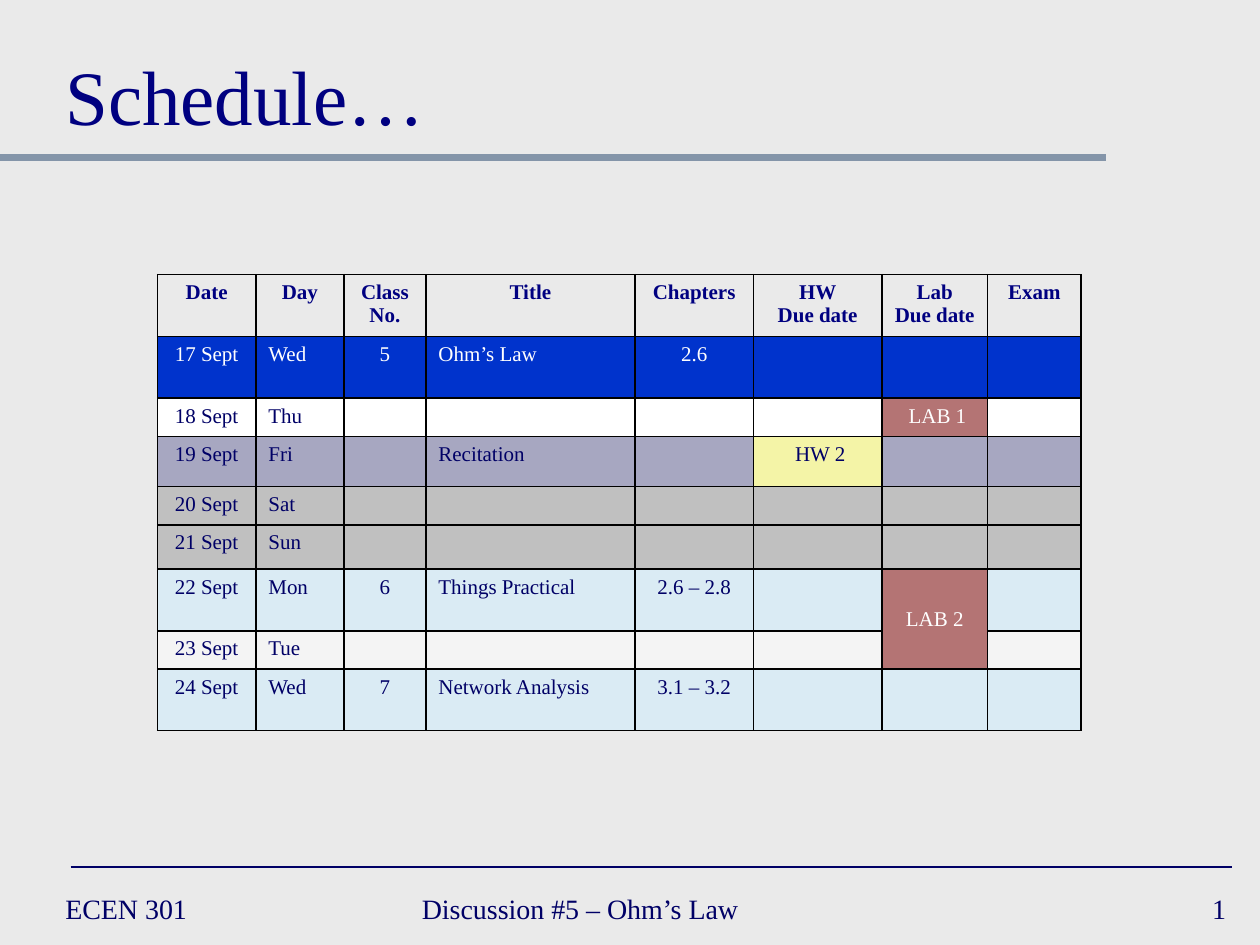
from dataclasses import dataclass, field
from typing import Optional

from lxml import etree
from pptx import Presentation
from pptx.dml.color import RGBColor
from pptx.enum import shapes, text
from pptx.oxml import ns
from pptx.util import Inches, Pt


@dataclass(frozen=True)
class Theme:
    font: str = "Times New Roman"
    background: str = "EAEAEA"
    title: str = "000080"
    body: str = "000066"
    light: str = "FFFFFF"
    border: str = "000000"
    title_rule: str = "8495A9"
    title_size: int = 44
    footer_size: int = 16
    table_size: int = 12


@dataclass(frozen=True)
class Fill:
    color: str
    alpha: int = 100


@dataclass(frozen=True)
class Day:
    """One table row; texts and fills are keyed by column heading."""
    height: float
    fill: Optional[Fill]
    texts: dict
    color: str
    bold: bool = False
    marks: dict = field(default_factory=dict)


@dataclass(frozen=True)
class Label:
    text: str
    box: tuple
    size: int
    color: str
    align: text.PP_ALIGN = text.PP_ALIGN.LEFT
    anchor: text.MSO_ANCHOR = text.MSO_ANCHOR.MIDDLE
    wrap: bool = False


@dataclass(frozen=True)
class Rule:
    start: tuple
    end: tuple
    color: str
    width: float


T = Theme()
LEFT, CENTER, RIGHT = text.PP_ALIGN.LEFT, text.PP_ALIGN.CENTER, text.PP_ALIGN.RIGHT

TODAY = Fill("0033CC")
OPEN = Fill("FFFFFF")
RECITATION = Fill("666699", 50)
WEEKEND = Fill("C0C0C0")
CLASS = Fill("CCECFF", 50)
FREE = Fill("FFFFFF", 50)
LAB = Fill("800000", 50)
HOMEWORK = Fill("FFFF66", 50)

COLUMNS = {"Date": 0.78, "Day": 0.7, "Class\nNo.": 0.65, "Title": 1.66, "Chapters": 0.94,
           "HW\nDue date": 1.02, "Lab\nDue date": 0.84, "Exam": 0.74}
HEADINGS = list(COLUMNS)
LEFT_COLUMNS = ("Day", "Title")
LAB_COLUMN = HEADINGS.index("Lab\nDue date")


def day(height: float, fill: Fill, *texts: str, color: str = T.body, **marks) -> Day:
    """Row with texts from the first column on; marks are hw or lab (text, fill)."""
    names = {"hw": "HW\nDue date", "lab": "Lab\nDue date"}
    return Day(height, fill, dict(zip(HEADINGS, texts)), color,
               marks={names[k]: v for k, v in marks.items()})


ROWS = [
    Day(0.49, None, {h: h for h in HEADINGS}, T.title, bold=True),
    day(0.49, TODAY, "17 Sept", "Wed", "5", "Ohm’s Law", "2.6", color=T.light),
    day(0.3, OPEN, "18 Sept", "Thu", lab=(" LAB 1", LAB)),
    day(0.4, RECITATION, "19 Sept", "Fri", "", "Recitation", hw=(" HW 2", HOMEWORK)),
    day(0.3, WEEKEND, "20 Sept", "Sat"),
    day(0.35, WEEKEND, "21 Sept", "Sun"),
    day(0.49, CLASS, "22 Sept", "Mon", "6", "Things Practical", "2.6 – 2.8", lab=("LAB 2", LAB)),
    day(0.29, FREE, "23 Sept", "Tue"),
    day(0.49, CLASS, "24 Sept", "Wed", "7", "Network Analysis", "3.1 – 3.2"),
]
LAB_2_ROW = 6

RULES = [
    Rule((0, 1.25), (8.78, 1.25), T.title_rule, 4),
    Rule((0.56, 6.88), (9.78, 6.88), T.body, 1),
]
LABELS = [
    Label("ECEN 301", (0.42, 7, 2.17, 0.42), T.footer_size, T.body),
    Label("Discussion #5 – Ohm’s Law", (3.25, 7, 3.83, 0.42), T.footer_size, T.body),
    Label("1", (7.75, 7, 2.08, 0.42), T.footer_size, T.body, RIGHT),
    Label("Schedule…", (0.42, 0.17, 9.25, 1), T.title_size, T.title,
          anchor=text.MSO_ANCHOR.BOTTOM, wrap=True),
]


def write(tf, content: str, *, size: int, color: str, align=LEFT, bold: bool = False) -> None:
    for i, line in enumerate(content.split("\n")):
        p = tf.paragraphs[0] if i == 0 else tf.add_paragraph()
        p.alignment = align
        if not line:
            etree.SubElement(p._p, ns.qn("a:endParaRPr"), sz=str(size * 100))
            continue
        r = p.add_run()
        r.text = line
        r.font.name, r.font.size, r.font.bold = T.font, Pt(size), bold
        r.font.color.rgb = RGBColor.from_string(color)


def add_rule(slide, rule: Rule) -> None:
    sp = slide.shapes.add_connector(shapes.MSO_CONNECTOR.STRAIGHT,
                                    *map(Inches, rule.start + rule.end))
    sp.line.color.rgb = RGBColor.from_string(rule.color)
    sp.line.width = Pt(rule.width)
    etree.SubElement(sp._element.spPr, ns.qn("a:effectLst"))


def add_label(slide, label: Label) -> None:
    tf = slide.shapes.add_textbox(*map(Inches, label.box)).text_frame
    tf.word_wrap = label.wrap
    tf.vertical_anchor = label.anchor
    write(tf, label.text, size=label.size, color=label.color, align=label.align)


def add_borders(cell) -> None:
    tc_pr = cell._tc.get_or_add_tcPr()
    for side in "LRTB":
        ln = etree.SubElement(tc_pr, ns.qn(f"a:ln{side}"), w=str(Pt(1)))
        solid = etree.SubElement(ln, ns.qn("a:solidFill"))
        etree.SubElement(solid, ns.qn("a:srgbClr"), val=T.border)


def fill_cell(cell, fill: Optional[Fill]) -> None:
    if fill is None:
        cell.fill.background()
        return
    cell.fill.solid()
    cell.fill.fore_color.rgb = RGBColor.from_string(fill.color)
    if fill.alpha < 100:
        color = cell._tc.tcPr.find(f"{ns.qn('a:solidFill')}/{ns.qn('a:srgbClr')}")
        etree.SubElement(color, ns.qn("a:alpha"), val=str(fill.alpha * 1000))


def add_schedule(slide) -> None:
    height = sum(row.height for row in ROWS)
    table = slide.shapes.add_table(len(ROWS), len(COLUMNS), Inches(1.25), Inches(2.18),
                                   Inches(sum(COLUMNS.values())), Inches(height)).table
    table.first_row = table.horz_banding = False
    for column, width in zip(table.columns, COLUMNS.values()):
        column.width = Inches(width)
    for i, row in enumerate(ROWS):
        table.rows[i].height = Inches(row.height)
        for j, heading in enumerate(HEADINGS):
            cell = table.cell(i, j)
            content, fill = row.marks.get(heading, (row.texts.get(heading, ""), row.fill))
            color = T.light if fill == LAB else row.color
            align = LEFT if heading in LEFT_COLUMNS and not row.bold else CENTER
            add_borders(cell)
            fill_cell(cell, fill)
            write(cell.text_frame, content, size=T.table_size, color=color,
                  align=align, bold=row.bold)
    lab_2 = table.cell(LAB_2_ROW, LAB_COLUMN)
    lab_2.merge(table.cell(LAB_2_ROW + 1, LAB_COLUMN))
    lab_2.vertical_anchor = text.MSO_ANCHOR.MIDDLE


def main() -> None:
    prs = Presentation()
    prs.slide_width, prs.slide_height = Inches(10), Inches(7.5)
    slide = prs.slides.add_slide(prs.slide_layouts[6])
    slide.background.fill.solid()
    slide.background.fill.fore_color.rgb = RGBColor.from_string(T.background)
    for rule in RULES:
        add_rule(slide, rule)
    add_schedule(slide)
    for label in LABELS:
        add_label(slide, label)
    prs.save("out.pptx")


if __name__ == "__main__":
    main()
